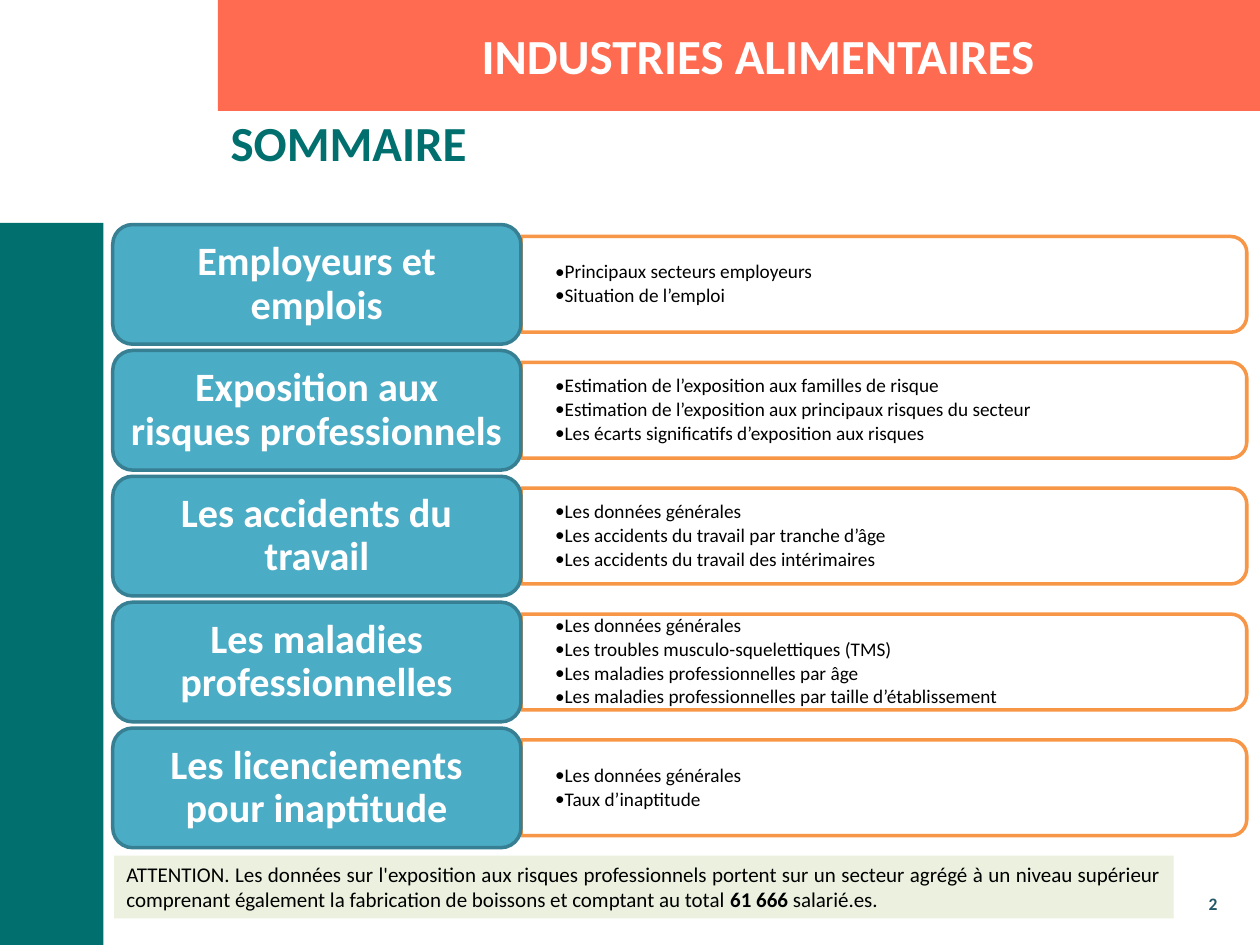
"""Build the summary slide of the food industry report."""
from lxml import etree
from pptx import Presentation
from pptx import util as u
from pptx.dml.color import RGBColor
from pptx.enum import shapes, text
from pptx.oxml import ns

CORAL = RGBColor(0xFF, 0x6B, 0x50)
TEAL = RGBColor(0x00, 0x6F, 0x6E)
PAGE_TEAL = RGBColor(0x21, 0x59, 0x68)
BLUE = RGBColor(0x4B, 0xAC, 0xC6)
BLUE_EDGE = RGBColor(0x37, 0x7F, 0x92)
ORANGE = RGBColor(0xF7, 0x96, 0x46)
PALE_GREEN = RGBColor(0xEB, 0xF1, 0xDE)
WHITE = RGBColor(0xFF, 0xFF, 0xFF)
BLACK = RGBColor(0x00, 0x00, 0x00)

FONT = "Calibri"
COLUMNS, ROWS = 100, 75
FIRST_ROW, SECTION_PITCH = 17.82, 9.99
SECTIONS = [
    ("Employeurs et emplois",
     ["Principaux secteurs employeurs", "Situation de l’emploi"]),
    ("Exposition aux\nrisques professionnels",
     ["Estimation de l’exposition aux familles de risque",
      "Estimation de l’exposition aux principaux risques du secteur",
      "Les écarts significatifs d’exposition aux risques"]),
    ("Les accidents du travail",
     ["Les données générales",
      "Les accidents du travail par tranche d’âge",
      "Les accidents du travail des intérimaires"]),
    ("Les maladies professionnelles",
     ["Les données générales",
      "Les troubles musculo-squelettiques (TMS)",
      "Les maladies professionnelles par âge",
      "Les maladies professionnelles par taille d’établissement"]),
    ("Les licenciements pour inaptitude",
     ["Les données générales", "Taux d’inaptitude"]),
]
WARNING = [
    ("ATTENTION. Les données sur l'exposition aux risques professionnels "
     "portent sur un secteur agrégé à un niveau supérieur comprenant également "
     "la fabrication de boissons et comptant au total ", False),
    ("61 666", True),
    (" salarié.es.", False),
]


def add_bullet(paragraph):
    properties = paragraph._p.get_or_add_pPr()
    properties.set("marL", str(u.Inches(0.06)))
    properties.set("indent", str(-u.Inches(0.06)))
    etree.SubElement(properties, ns.qn("a:buFont")).set("typeface", FONT)
    etree.SubElement(properties, ns.qn("a:buChar")).set("char", "•")


def write(frame, paragraphs, size, color, bold=False, align=text.PP_ALIGN.LEFT,
          anchor=text.MSO_ANCHOR.TOP, insets=(0.1, 0.05), spacing=None,
          after=None, bullets=False):
    frame.word_wrap = True
    frame.auto_size = text.MSO_AUTO_SIZE.NONE
    frame.vertical_anchor = anchor
    frame.margin_left = frame.margin_right = u.Inches(insets[0])
    frame.margin_top = frame.margin_bottom = u.Inches(insets[1])
    for index, content in enumerate(paragraphs):
        paragraph = frame.add_paragraph() if index else frame.paragraphs[0]
        paragraph.alignment = align
        paragraph.line_spacing = spacing
        paragraph.space_after = after
        if bullets:
            paragraph.level = 1
            add_bullet(paragraph)
        pieces = [(content, bold)] if isinstance(content, str) else content
        for words, strong in pieces:
            for line_index, line in enumerate(words.split("\n")):
                if line_index:
                    paragraph.add_line_break()
                run = paragraph.add_run()
                run.text = line
                run.font.name = FONT
                run.font.size = u.Pt(size)
                run.font.bold = strong
                run.font.color.rgb = color


class SummarySlide:
    def __init__(self, deck):
        self.cell_width = deck.slide_width / COLUMNS
        self.cell_height = deck.slide_height / ROWS
        self.slide = deck.slides.add_slide(deck.slide_layouts[5])

    def place(self, column, row, columns, rows):
        return (u.Emu(round(column * self.cell_width)),
                u.Emu(round(row * self.cell_height)),
                u.Emu(round(columns * self.cell_width)),
                u.Emu(round(rows * self.cell_height)))

    def title(self, words, *area, **style):
        heading = self.slide.shapes.title
        heading.left, heading.top, heading.width, heading.height = self.place(*area)
        write(heading.text_frame, [words], **style)

    def label(self, paragraphs, *area, **style):
        box = self.slide.shapes.add_textbox(*self.place(*area))
        write(box.text_frame, paragraphs, **style)

    def block(self, *area, fill, edge=None, kind=shapes.MSO_SHAPE.RECTANGLE):
        block = self.slide.shapes.add_shape(kind, *self.place(*area))
        block.shadow.inherit = False
        block.fill.solid()
        block.fill.fore_color.rgb = fill
        if edge is None:
            block.line.fill.background()
        else:
            block.line.color.rgb = edge
            block.line.width = u.Pt(2)
        return block

    def panel(self, column, row, columns, rows):
        panel = self.block(column + (columns - rows) / 2, row - (columns - rows) / 2,
                           rows, columns, fill=WHITE, edge=ORANGE,
                           kind=shapes.MSO_SHAPE.ROUND_2_SAME_RECTANGLE)
        panel.rotation = 90

    def section(self, row, heading, topics):
        self.panel(41.35, row + 0.95, 57.6, 7.6)
        self.label(topics, 41.35, row + 1.3, 57.2, 6.9, size=11, color=BLACK,
                   anchor=text.MSO_ANCHOR.MIDDLE, insets=(0.27, 0.14),
                   spacing=0.9, after=u.Pt(1.65), bullets=True)
        pill = self.block(8.95, row, 32.4, 9.5, fill=BLUE, edge=BLUE_EDGE,
                          kind=shapes.MSO_SHAPE.ROUNDED_RECTANGLE)
        write(pill.text_frame, [heading], size=23, color=WHITE, bold=True,
              align=text.PP_ALIGN.CENTER, anchor=text.MSO_ANCHOR.MIDDLE,
              insets=(0.08, 0.05), spacing=0.9)


def main():
    deck = Presentation()
    deck.slide_width, deck.slide_height = u.Inches(10), u.Inches(7.5)
    summary = SummarySlide(deck)
    summary.block(17.3, 0, 82.7, 8.8, fill=CORAL)
    summary.block(0, 17.7, 8.2, 57.3, fill=TEAL)
    summary.title("SOMMAIRE", 17.3, 8.45, 82.5, 8.5, size=28, color=TEAL, bold=True)
    for index, (heading, topics) in enumerate(SECTIONS):
        summary.section(FIRST_ROW + index * SECTION_PITCH, heading, topics)
    warning = summary.block(9.05, 67.9, 84.1, 5, fill=PALE_GREEN)
    write(warning.text_frame, [WARNING], size=12, color=BLACK,
          align=text.PP_ALIGN.JUSTIFY)
    summary.label(["INDUSTRIES ALIMENTAIRES"], 21.5, 1.5, 77.3, 5.7, size=28,
                  color=WHITE, bold=True, align=text.PP_ALIGN.CENTER)
    summary.label(["2"], 87.4, 70.4, 10.2, 3.2, size=10, color=PAGE_TEAL,
                  bold=True, align=text.PP_ALIGN.RIGHT)
    deck.save("out.pptx")


if __name__ == "__main__":
    main()
